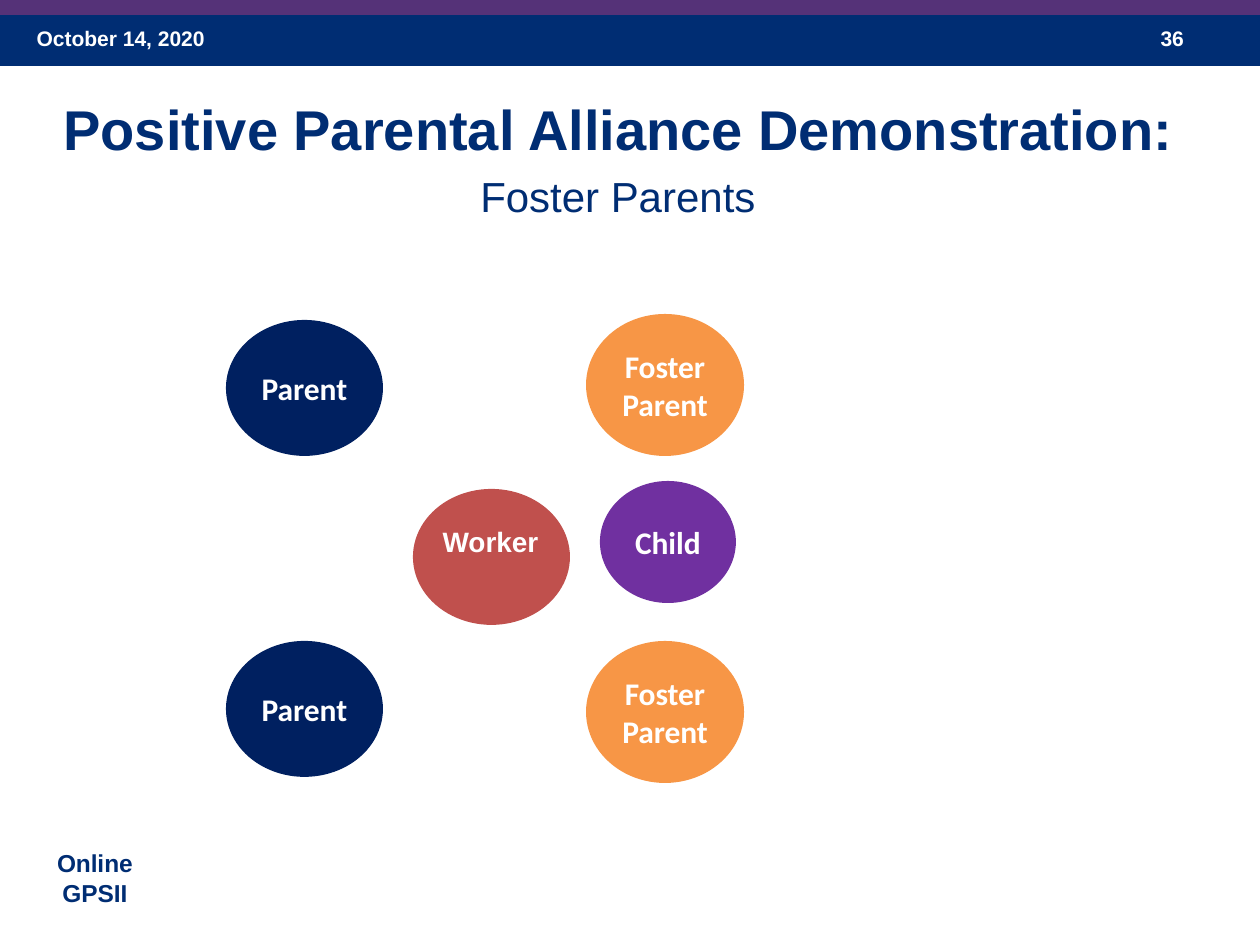
import pptx
import pptx.dml.color
import pptx.enum.shapes
import pptx.enum.text
import pptx.util

COLORS = {
    "navy": "002D73", "plum": "553278", "white": "FFFFFF", "parent": "002060",
    "child": "7030A0", "worker": "C0504D", "foster": "F79646",
}
EMU_PER_PX = 914400 / 168
SHAPES = pptx.enum.shapes.MSO_SHAPE
ALIGN = pptx.enum.text.PP_ALIGN
ANCHOR = pptx.enum.text.MSO_ANCHOR


def px(length):
    """Turn pixels into EMU."""
    return pptx.util.Emu(round(length * EMU_PER_PX))


def box(left, top, width, height):
    """Return a pixel box in EMU."""
    return [px(length) for length in (left, top, width, height)]


def color(name):
    """Look up a named colour."""
    return pptx.dml.color.RGBColor.from_string(COLORS[name])


def apply(target, values):
    """Set attributes from a dict of format values."""
    for name, value in values.items():
        setattr(target, name, value)


def write(frame, lines, ink, align=ALIGN.LEFT, font="Arial", **frame_format):
    """Write (text, size, bold, space before) lines into a text frame."""
    apply(frame, {"word_wrap": True, "vertical_anchor": ANCHOR.TOP, **frame_format})
    for index, (text, size, bold, before) in enumerate(lines):
        paragraph = frame.paragraphs[0] if index == 0 else frame.add_paragraph()
        paragraph.text = text
        apply(paragraph, {"alignment": align, "line_spacing": 1.0,
                          "space_before": pptx.util.Pt(before)})
        apply(paragraph.font, {"name": font, "size": pptx.util.Pt(size), "bold": bold})
        paragraph.font.color.rgb = color(ink)


def add_filled(slide, kind, place, fill):
    """Add a flat shape without outline."""
    shape = slide.shapes.add_shape(kind, *box(*place))
    shape.shadow.inherit = False
    shape.fill.solid()
    shape.fill.fore_color.rgb = color(fill)
    shape.line.fill.background()
    return shape


def add_label(slide, place, words, size, ink, **text_format):
    """Add a bold text box with one paragraph per word."""
    label = slide.shapes.add_textbox(*box(*place))
    write(label.text_frame, [(word, size, True, 0) for word in words], ink, **text_format)


def add_person(slide, place, fill, words):
    """Add a circle naming a person's role."""
    person = add_filled(slide, SHAPES.FLOWCHART_CONNECTOR, place, fill)
    if words:
        write(person.text_frame, [(word, 13.5, True, 0) for word in words], "white",
              ALIGN.CENTER, "Calibri", vertical_anchor=ANCHOR.MIDDLE,
              margin_left=px(12), margin_right=px(12), margin_top=px(6), margin_bottom=px(6))


def add_title(slide):
    """Place and format the two-line title."""
    title = slide.shapes.title
    apply(title, dict(zip(("left", "top", "width", "height"), box(20, 81, 1196, 171))))
    write(title.text_frame,
          [("Positive Parental Alliance Demonstration:", 24, True, 0),
           ("Foster Parents", 18, False, 4)],
          "navy", ALIGN.CENTER, margin_left=px(12), margin_right=px(12), margin_top=px(13),
          auto_size=pptx.enum.text.MSO_AUTO_SIZE.NONE)


def main():
    """Build the slide and save it."""
    deck = pptx.Presentation()
    apply(deck, {"slide_width": px(1260), "slide_height": px(945)})
    slide = deck.slides.add_slide(deck.slide_layouts[5])

    add_filled(slide, SHAPES.RECTANGLE, (0, 11, 1260, 55), "navy")
    add_filled(slide, SHAPES.RECTANGLE, (0, 0, 1260, 15), "plum")
    add_label(slide, (20, 17, 294, 50), ["October 14, 2020"], 9, "white")
    add_label(slide, (1144, 17, 94, 50), ["36"], 9, "white")
    add_label(slide, (36, 840, 118, 67), ["Online", "GPSII"], 10.5, "navy",
              align=ALIGN.CENTER)
    add_title(slide)

    people = [
        ((226, 320, 157, 136), "parent", ["Parent"]),
        ((226, 641, 157, 136), "parent", ["Parent"]),
        ((600, 481, 136, 122), "child", ["Child"]),
        ((413, 489, 157, 136), "worker", []),
        ((586, 314, 158, 142), "foster", ["Foster", "Parent"]),
        ((586, 641, 158, 142), "foster", ["Foster", "Parent"]),
    ]
    for place, role, words in people:
        add_person(slide, place, role, words)
    add_label(slide, (426, 516, 131, 50), ["Worker"], 12, "white", word_wrap=False)
    deck.save("out.pptx")


if __name__ == "__main__":
    main()
